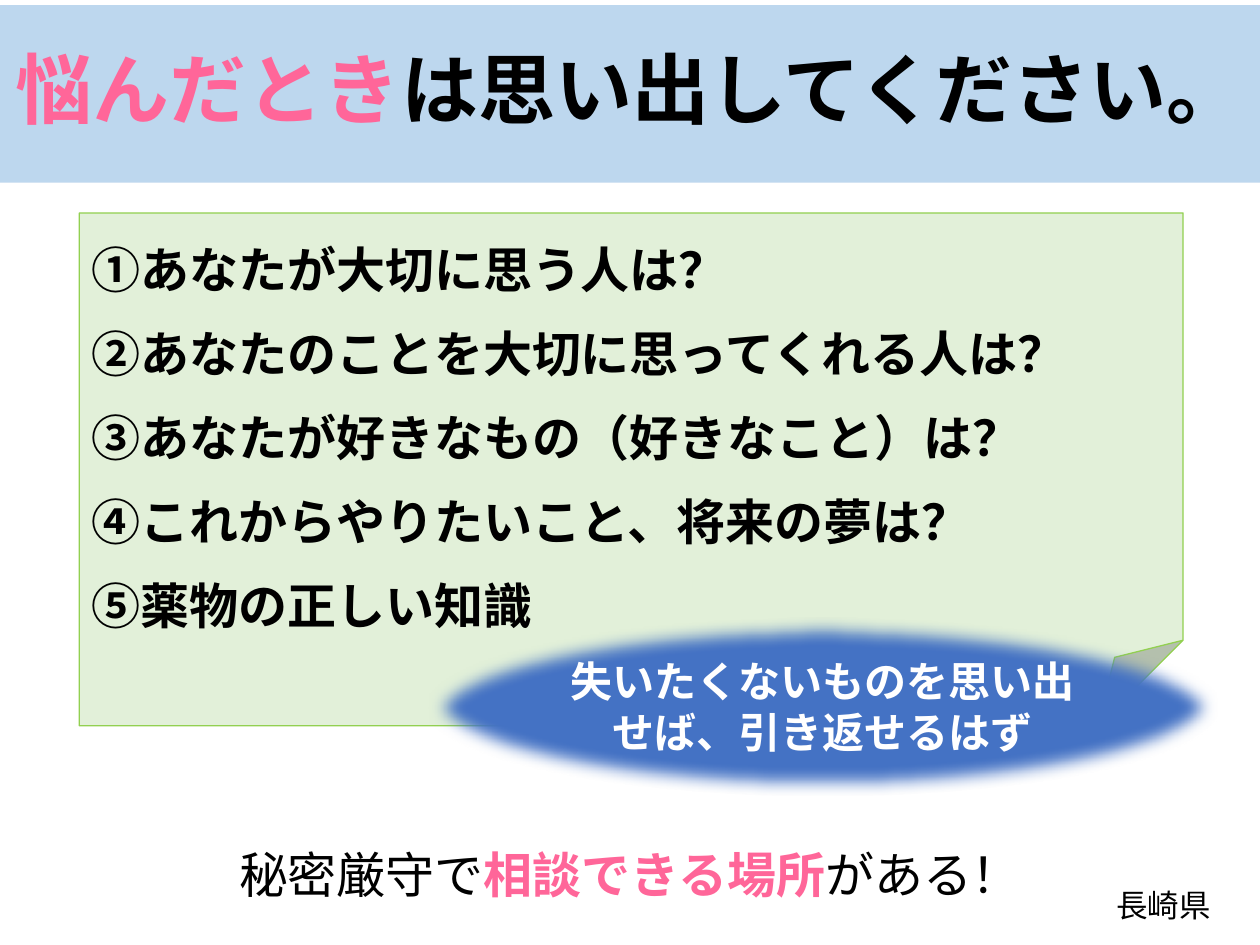
from lxml import etree
from pptx import Presentation
from pptx.dml.color import RGBColor
from pptx.enum.shapes import MSO_SHAPE
from pptx.enum.text import MSO_ANCHOR, PP_ALIGN
from pptx.oxml.ns import qn
from pptx.util import Inches, Pt

RECTANGLE, OVAL, FOLDED = MSO_SHAPE.RECTANGLE, MSO_SHAPE.OVAL, MSO_SHAPE.FOLDED_CORNER
MIDDLE, BOTTOM, TOP = MSO_ANCHOR.MIDDLE, MSO_ANCHOR.BOTTOM, MSO_ANCHOR.TOP
CENTER, LEFT = PP_ALIGN.CENTER, PP_ALIGN.LEFT
FONT = "Noto Sans CJK JP"
BLACK, PINK, WHITE = "000000", "FF6699", "FFFFFF"
QUESTIONS = [
    "①あなたが大切に思う人は？",
    "②あなたのことを大切に思ってくれる人は？",
    "③あなたが好きなもの（好きなこと）は？",
    "④これからやりたいこと、将来の夢は？",
    "⑤薬物の正しい知識",
]


def color(value):
    return RGBColor.from_string(value)


def add_box(slide, kind, box, fill, line=None, line_width=1):
    shape = slide.shapes.add_shape(kind, *map(Inches, box))
    shape.shadow.inherit = False
    shape.fill.solid()
    shape.fill.fore_color.rgb = color(fill)
    if line:
        shape.line.color.rgb = color(line)
        shape.line.width = Pt(line_width)
    else:
        shape.line.fill.background()
    return shape


def write(shape, paragraphs, size, align=CENTER, anchor=MIDDLE, gap=0):
    """Fill the shape with paragraphs, each a list of (text, colour, bold)."""
    frame = shape.text_frame
    frame.word_wrap = True
    frame.vertical_anchor = anchor
    for index, runs in enumerate(paragraphs):
        paragraph = frame.paragraphs[0] if index == 0 else frame.add_paragraph()
        paragraph.alignment = align
        paragraph.font.size = Pt(size)
        if index:
            paragraph.space_before = Pt(gap)
        for text, run_color, bold in runs:
            run = paragraph.add_run()
            run.text = text
            run.font.size = Pt(size)
            run.font.bold = bold
            run.font.color.rgb = color(run_color)
            run.font.name = FONT
            east_asian = etree.SubElement(run.font._element, qn("a:ea"))
            east_asian.set("typeface", FONT)


def soften_edge(shape, radius):
    effects = shape._element.spPr.find(qn("a:effectLst"))
    etree.SubElement(effects, qn("a:softEdge")).set("rad", str(radius))


def add_title(slide, box):
    banner = add_box(slide, RECTANGLE, box, "BDD7EE")
    write(banner, [[("悩んだとき", PINK, True), ("は思い出してください。", BLACK, True)]], 44)
    banner.text_frame.paragraphs[0].line_spacing = 0.9


def add_questions(slide, box):
    note = add_box(slide, FOLDED, box, "E2F0D9", "92D050", 0.75)
    write(note, [[(question, BLACK, True)] for question in QUESTIONS],
          28, LEFT, BOTTOM, gap=14.4)


def add_callout(slide, box):
    callout = add_box(slide, OVAL, box, "4472C4", "325491")
    soften_edge(callout, Pt(9))
    write(callout, [[("失いたくないものを思い出せば、引き返せるはず", WHITE, True)]], 24)


def add_caption(slide, box, runs, size):
    caption = slide.shapes.add_textbox(*map(Inches, box))
    write(caption, [runs], size, anchor=TOP)


def main():
    presentation = Presentation()
    presentation.slide_width = Inches(10)
    presentation.slide_height = Inches(7.5)
    slide = presentation.slides.add_slide(presentation.slide_layouts[6])
    add_questions(slide, (0.63, 1.69, 8.76, 4.07))
    add_caption(slide, (1.3, 6.65, 7.4, 0.57), [
        ("秘密厳守で", BLACK, False),
        ("相談できる場所", PINK, True),
        ("がある！", BLACK, False),
    ], 28)
    add_title(slide, (0, 0.04, 10, 1.41))
    add_callout(slide, (3.36, 4.9, 6.33, 1.41))
    add_caption(slide, (8.58, 6.98, 1.31, 0.4), [("長崎県", BLACK, False)], 18)
    presentation.save("out.pptx")


if __name__ == "__main__":
    main()
